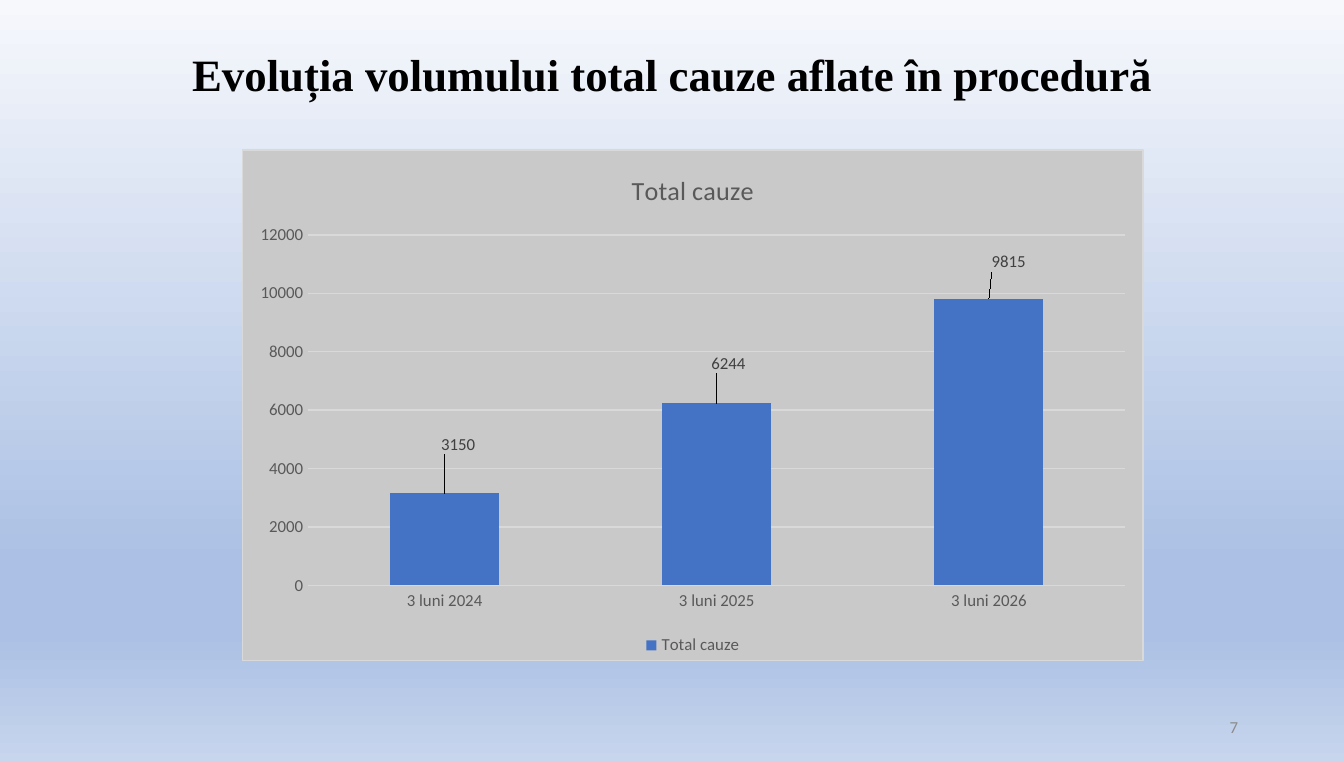
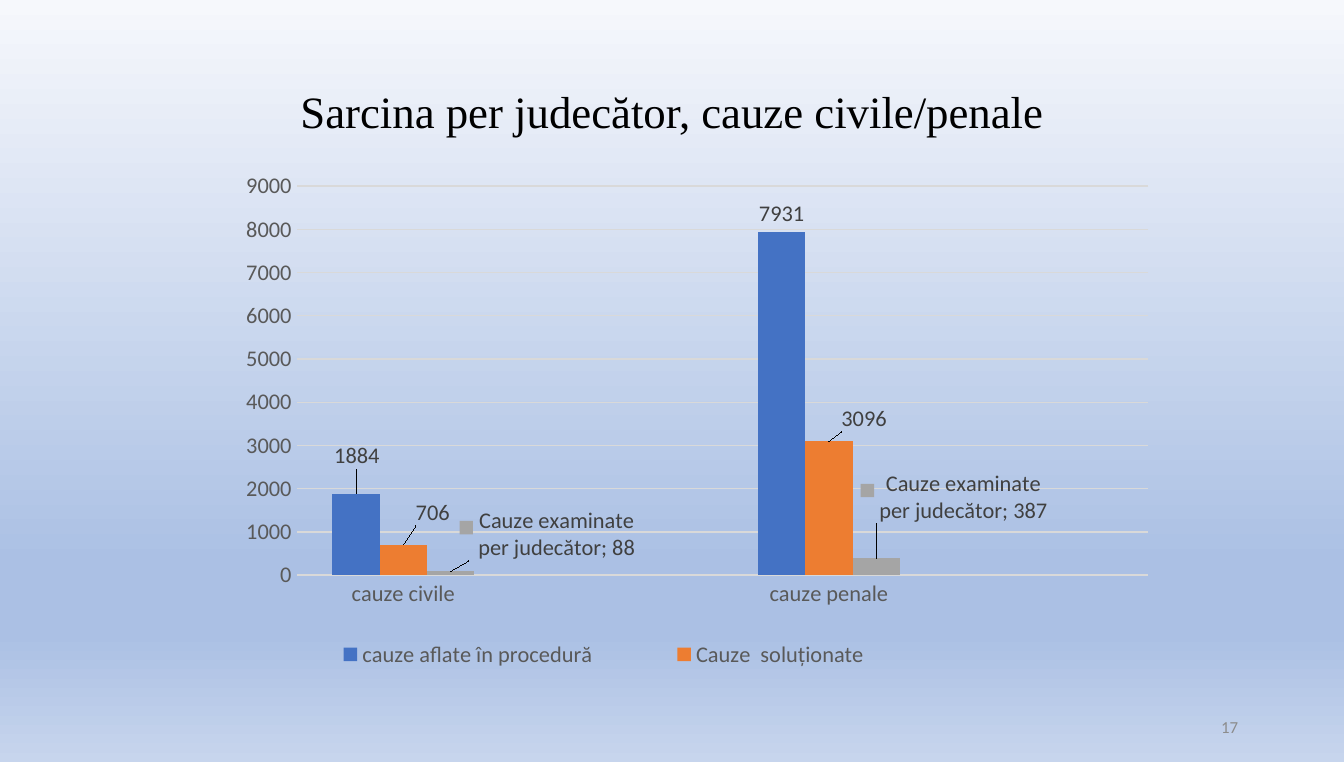
from copy import deepcopy

from lxml.etree import SubElement
from pptx import Presentation
from pptx.chart.data import CategoryChartData
from pptx.dml.color import RGBColor
from pptx.enum.chart import XL_CHART_TYPE as ChartType
from pptx.enum.chart import XL_LABEL_POSITION as LabelPos
from pptx.enum.chart import XL_LEGEND_POSITION as LegendPos
from pptx.enum.chart import XL_TICK_MARK as Tick
from pptx.enum.text import MSO_ANCHOR as Anchor
from pptx.enum.text import PP_ALIGN as Align
from pptx.oxml import parse_xml
from pptx.oxml.ns import nsdecls, qn
from pptx.util import Emu, Pt

PX = 9144


def px(length):
    return Emu(length * PX)


def color(hex_code):
    return RGBColor.from_string(hex_code)


def add_value(parent, tag, value):
    SubElement(parent, qn(tag)).set("val", str(value))


def manual_layout(**values):
    layout = parse_xml(f"<c:layout {nsdecls('c')}><c:manualLayout/></c:layout>")
    for tag, value in values.items():
        add_value(layout[0], f"c:{tag}", value)
    return layout


class Deck:
    SKY = [(0, "F6F8FC"), (74, "ABC0E4"), (83, "ABC0E4"), (100, "C7D5ED")]
    SERIES = ["4472C4", "ED7D31", "A5A5A5"]
    BLACK, AXIS, LABEL, NUMBER, GRID = "000000", "595959", "404040", "8C8C8C", "D9D9D9"
    HEADING, BODY = "Times New Roman", "Calibri"

    def __init__(self):
        self.prs = Presentation()
        self.prs.slide_width, self.prs.slide_height = px(1000), px(567)
        self.slide = None

    def style(self, font, size, hex_code, name=BODY, bold=False):
        font.size, font.name, font.bold = Pt(size), name, bold
        font.color.rgb = color(hex_code)

    def new_slide(self, heading, number, bold=False, lift=0):
        self.slide = self.prs.slides.add_slide(self.prs.slide_layouts[6])
        self.background()
        title = self.text(heading, (69, 30, 862, 110), Align.CENTER, 24,
                          self.BLACK, self.HEADING, bold)
        title.margin_bottom = px(5 + lift)
        title.paragraphs[0].line_spacing = 0.9
        self.text(str(number), (706, 526, 225, 30), Align.RIGHT, 9, self.NUMBER)

    def background(self):
        fill = self.slide.background.fill
        fill.gradient()
        fill.gradient_angle = 270
        stops = self.slide._element.xpath(".//a:gsLst")[0]
        for _ in self.SKY[2:]:
            stops.append(deepcopy(stops[0]))
        for stop, (percent, shade) in zip(fill.gradient_stops, self.SKY):
            stop.position = percent / 100
            stop.color.rgb = color(shade)

    def text(self, words, box, align, size, hex_code, name=BODY, bold=False):
        frame = self.slide.shapes.add_textbox(*map(px, box)).text_frame
        frame.word_wrap = True
        frame.vertical_anchor = Anchor.MIDDLE
        line = frame.paragraphs[0]
        line.text, line.alignment = words, align
        self.style(line.font, size, hex_code, name, bold)
        return frame

    def columns(self, box, categories, series, size):
        data = CategoryChartData()
        data.categories = categories
        for name, values in series:
            data.add_series(name, values)
        chart = self.slide.shapes.add_chart(
            ChartType.COLUMN_CLUSTERED, *map(px, box), data).chart
        self.style(chart.font, 10, self.BLACK)
        chart.has_title = False
        plot = chart.plots[0]
        plot.gap_width, plot.overlap, plot.vary_by_categories = 150, 0, False
        for axis in (chart.category_axis, chart.value_axis):
            axis.major_tick_mark = axis.minor_tick_mark = Tick.NONE
            axis.format.line.fill.background()
            self.style(axis.tick_labels.font, size, self.AXIS)
        grid = chart.value_axis.major_gridlines.format.line
        grid.width, grid.color.rgb = Pt(0.75), color(self.GRID)
        chart.has_legend = True
        chart.legend.position = LegendPos.BOTTOM
        chart.legend.include_in_layout = False
        self.style(chart.legend.font, size, self.AXIS)
        for bars, shade in zip(plot.series, self.SERIES):
            bars.format.fill.solid()
            bars.format.fill.fore_color.rgb = color(shade)
            bars.invert_if_negative = False
            labels = bars.data_labels
            labels.show_value, labels.position = True, LabelPos.OUTSIDE_END
            self.style(labels.font, size, self.LABEL)
        return chart

    def chart_title(self, chart, words):
        chart.has_title = True
        chart.chart_title.include_in_layout = False
        line = chart.chart_title.text_frame.paragraphs[0]
        line.text = words
        self.style(line.font, 14, self.AXIS)

    def chart_area(self, chart, fill=None):
        paint, edge = "<a:noFill/>", "<a:ln><a:noFill/></a:ln>"
        if fill:
            paint = f'<a:solidFill><a:srgbClr val="{fill}"/></a:solidFill>'
            edge = (f'<a:ln w="{Pt(0.75)}"><a:solidFill>'
                    f'<a:srgbClr val="{self.GRID}"/></a:solidFill></a:ln>')
        area = parse_xml(f"<c:spPr {nsdecls('c', 'a')}>{paint}{edge}</c:spPr>")
        chart._chartSpace.find(qn("c:chart")).addnext(area)

    def move_label(self, bars, point, shift, box, size, words=None):
        label = bars.points[point].data_label
        if words:
            line = label.text_frame.paragraphs[0]
            line.text = words
            self.style(line.font, size, self.LABEL)
        else:
            self.style(label.font, size, self.LABEL)
        label.position = LabelPos.OUTSIDE_END
        node = bars._element.xpath(f'c:dLbls/c:dLbl[c:idx/@val="{point}"]')[0]
        if words:
            node.find(qn("c:showLegendKey")).set("val", "1")
        x, y = (round(step / side, 3) for step, side in zip(shift, box[2:]))
        node.find(qn("c:idx")).addnext(manual_layout(x=x, y=y))

    def place_plot(self, chart, x, y, w, h):
        area = chart._chartSpace.chart.plotArea
        for old in area.findall(qn("c:layout")):
            area.remove(old)
        area.insert(0, manual_layout(layoutTarget="inner", xMode="edge",
                                     yMode="edge", x=x, y=y, w=w, h=h))

    def place_legend(self, chart, hidden, x, y, w, h):
        legend = chart._chartSpace.chart.find(qn("c:legend"))
        for old in legend.findall(qn("c:layout")):
            legend.remove(old)
        entry = parse_xml(f"<c:legendEntry {nsdecls('c')}/>")
        add_value(entry, "c:idx", hidden)
        add_value(entry, "c:delete", 1)
        legend.find(qn("c:legendPos")).addnext(entry)
        entry.addnext(manual_layout(xMode="edge", yMode="edge", x=x, y=y, w=w, h=h))


def total_cases(deck):
    deck.new_slide("Evoluția volumului total cauze aflate în procedură", 7,
                   bold=True, lift=56)
    box = (180, 111, 671, 381)
    quarters = [f"3 luni {year}" for year in (2024, 2025, 2026)]
    chart = deck.columns(box, quarters, [("Total cauze", (3150, 6244, 9815))], 9)
    deck.chart_title(chart, "Total cauze")
    deck.chart_area(chart, "C9C9C9")
    totals = chart.plots[0].series[0]
    for quarter, shift in enumerate([(10, -25), (9, -18), (15, -16)]):
        deck.move_label(totals, quarter, shift, box, 9)


def cases_per_judge(deck):
    deck.new_slide("Sarcina per judecător, cauze civile/penale", 17)
    box = (170, 127, 707, 383)
    chart = deck.columns(box, ["cauze civile", "", "cauze penale", ""], [
        ("cauze aflate în procedură", (1884, None, 7931, None)),
        ("Cauze  soluționate", (706, None, 3096, None)),
        ("Sarcina per judecător", (88, None, 387, None)),
    ], 12)
    deck.chart_area(chart)
    deck.place_plot(chart, 0.072, 0.03, 0.896, 0.756)
    deck.place_legend(chart, 2, 0.04, 0.9, 0.71, 0.08)
    pending, solved, per_judge = chart.plots[0].series
    for bars, point, shift in [(pending, 0, (1, -14)), (solved, 0, (22, -10)),
                               (solved, 2, (26, -3))]:
        deck.move_label(bars, point, shift, box, 12)
    for point, shift in [(0, (72, -4)), (2, (58, -22))]:
        count = int(per_judge.values[point])
        deck.move_label(per_judge, point, shift, box, 12,
                        f"Cauze examinate per judecător; {count}")


def main():
    deck = Deck()
    total_cases(deck)
    cases_per_judge(deck)
    deck.prs.save("out.pptx")


if __name__ == "__main__":
    main()
